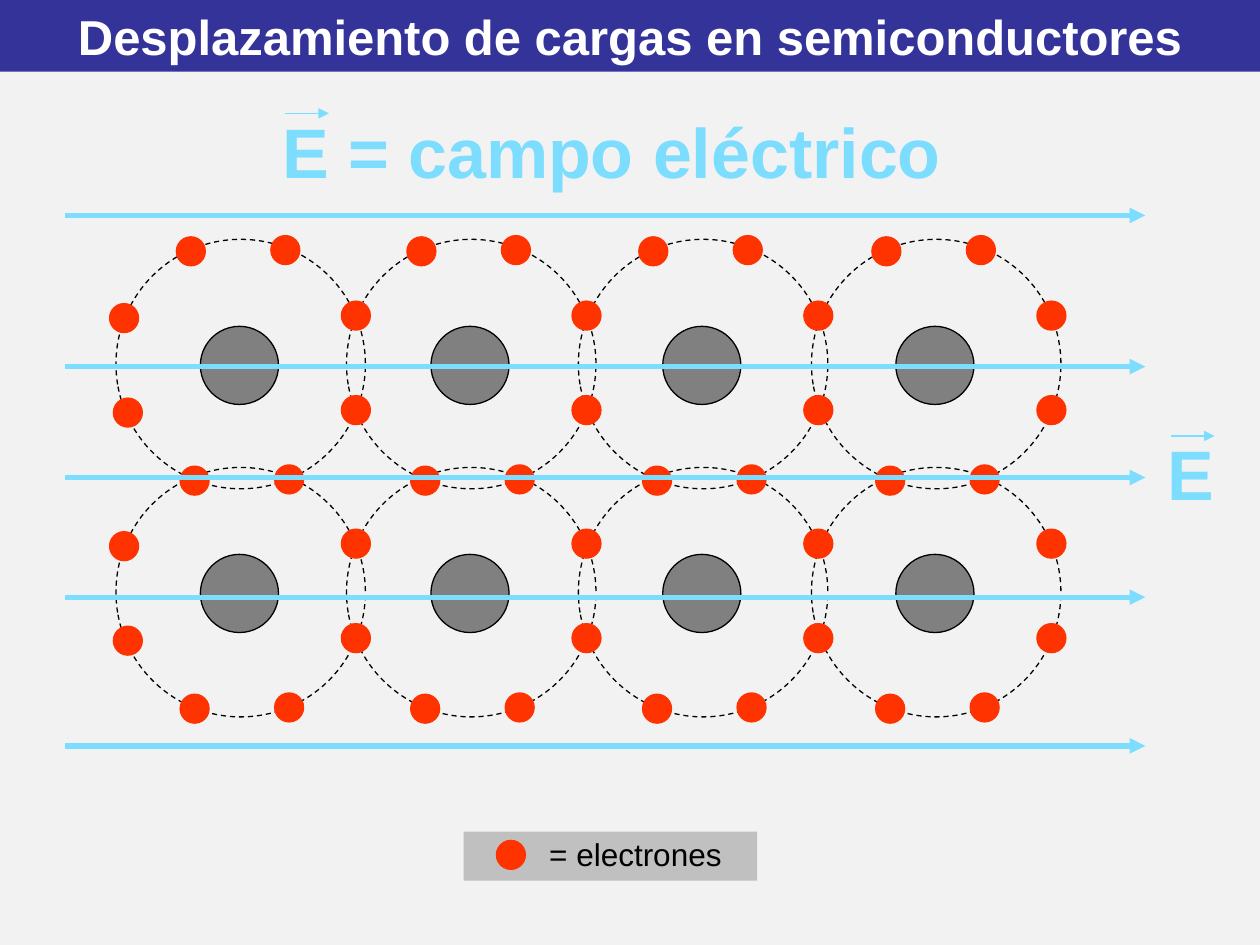
from itertools import product

from lxml import etree
from pptx import Presentation
from pptx import util as u
from pptx.dml.color import RGBColor
from pptx.enum import dml, shapes, text
from pptx.oxml.ns import qn

PAPER = RGBColor(0xF2, 0xF2, 0xF2)
NAVY = RGBColor(0x33, 0x33, 0x99)
SKY = RGBColor(0x7D, 0xDD, 0xFF)
RED = RGBColor(0xFF, 0x33, 0x00)
GRAY = RGBColor(0x80, 0x80, 0x80)
SILVER = RGBColor(0xC0, 0xC0, 0xC0)
BLACK = RGBColor(0, 0, 0)
WHITE = RGBColor(0xFF, 0xFF, 0xFF)

OVAL = shapes.MSO_SHAPE.OVAL
RECT = shapes.MSO_SHAPE.RECTANGLE

COLS = (0.92, 2.75, 4.59, 6.44)  # left edges of the orbits
ROWS = (1.9, 3.71)  # top edges of the orbits
ORBIT, CORE, DOT = 1.98, 0.62, 0.23

# Electron places, measured from the top left of an orbit
TOP = ((0.48, -0.02), (1.23, -0.03))
LEFT = ((-0.05, 0.51), (-0.02, 1.26))
RIGHT = ((1.79, 0.49), (1.79, 1.24))
BOTTOM = ((0.51, 1.8), (1.26, 1.79))


class Board:
    font = "Arial"
    thin = u.Pt(0.75)

    def __init__(self, slide):
        self.slide = slide
        fill = slide.background.fill
        fill.solid()
        fill.fore_color.rgb = PAPER

    def shape(self, kind, x, y, w, h, fill=None, line=None, dash=None):
        item = self.slide.shapes.add_shape(
            kind, u.Inches(x), u.Inches(y), u.Inches(w), u.Inches(h))
        item.shadow.inherit = False
        if fill is None:
            item.fill.background()
        else:
            item.fill.solid()
            item.fill.fore_color.rgb = fill
        if line is None:
            item.line.fill.background()
        else:
            item.line.color.rgb = line
            item.line.width = self.thin
            item.line.dash_style = dash
        return item

    def orbit(self, x, y):
        ring = self.shape(OVAL, x, y, ORBIT, ORBIT, line=BLACK,
                          dash=dml.MSO_LINE.DASH)
        ring.rotation = 350.6

    def core(self, x, y):
        self.shape(OVAL, x, y, CORE, CORE, GRAY, BLACK)

    def dot(self, x, y):
        self.shape(OVAL, x, y, DOT, DOT, RED, RED)

    def arrow(self, x, y, end, width):
        line = self.slide.shapes.add_connector(
            shapes.MSO_CONNECTOR.STRAIGHT,
            u.Inches(x), u.Inches(y), u.Inches(end), u.Inches(y))
        line.line.color.rgb = SKY
        line.line.width = width
        props = line._element.spPr
        tail = etree.SubElement(props.find(qn("a:ln")), qn("a:tailEnd"))
        tail.set("type", "triangle")
        etree.SubElement(props, qn("a:effectLst"))

    def words(self, item, words, size, color, bold=False, align=None):
        frame = item.text_frame
        frame.word_wrap = True
        frame.vertical_anchor = text.MSO_ANCHOR.TOP
        para = frame.paragraphs[0]
        para.alignment = align or text.PP_ALIGN.LEFT
        para.space_before = u.Pt(size * 0.1)
        run = para.add_run()
        run.text = words
        look = {"name": self.font, "size": u.Pt(size), "bold": bold}
        for key, value in look.items():
            setattr(run.font, key, value)
        run.font.color.rgb = color

    def label(self, x, y, w, h, *args, **look):
        box = self.slide.shapes.add_textbox(
            u.Inches(x), u.Inches(y), u.Inches(w), u.Inches(h))
        self.words(box, *args, **look)

    def field(self, x, y, w, words):
        """Label that starts with a vector E, its small arrow above."""
        self.label(x, y, w, 0.77, words, 40, SKY, bold=True)
        self.arrow(x + 0.12, y + 0.09, x + 0.47, self.thin)


def lattice(board):
    spots = list(product(ROWS, COLS))
    for y, x in spots:
        board.orbit(x, y)
    for y, x in spots:
        board.core(x + 0.67, y + 0.69)
    for y, x in spots:
        dots = RIGHT + BOTTOM
        if y == ROWS[0]:
            dots += TOP
        if x == COLS[0]:
            dots += LEFT
        for dx, dy in dots:
            board.dot(x + dx, y + dy)


def main():
    deck = Presentation()
    deck.slide_width, deck.slide_height = u.Inches(10), u.Inches(7.5)
    board = Board(deck.slides.add_slide(deck.slide_layouts[6]))

    lattice(board)

    board.shape(RECT, 3.68, 6.6, 2.33, 0.39, SILVER)
    board.dot(3.94, 6.67)
    board.label(4.26, 6.58, 1.91, 0.4, "= electrones", 18, BLACK)

    title = board.shape(RECT, 0, 0, 10, 0.57, NAVY)
    board.words(title, "Desplazamiento de cargas en semiconductores", 28,
                WHITE, bold=True, align=text.PP_ALIGN.CENTER)

    for y in (1.71, 2.91, 3.79, 4.74, 5.92):
        board.arrow(0.52, y, 9.09, u.Pt(3))
    board.field(9.17, 3.37, 0.83, "E")
    board.field(2.14, 0.81, 7.1, "E = campo eléctrico")

    deck.save("out.pptx")


if __name__ == "__main__":
    main()
